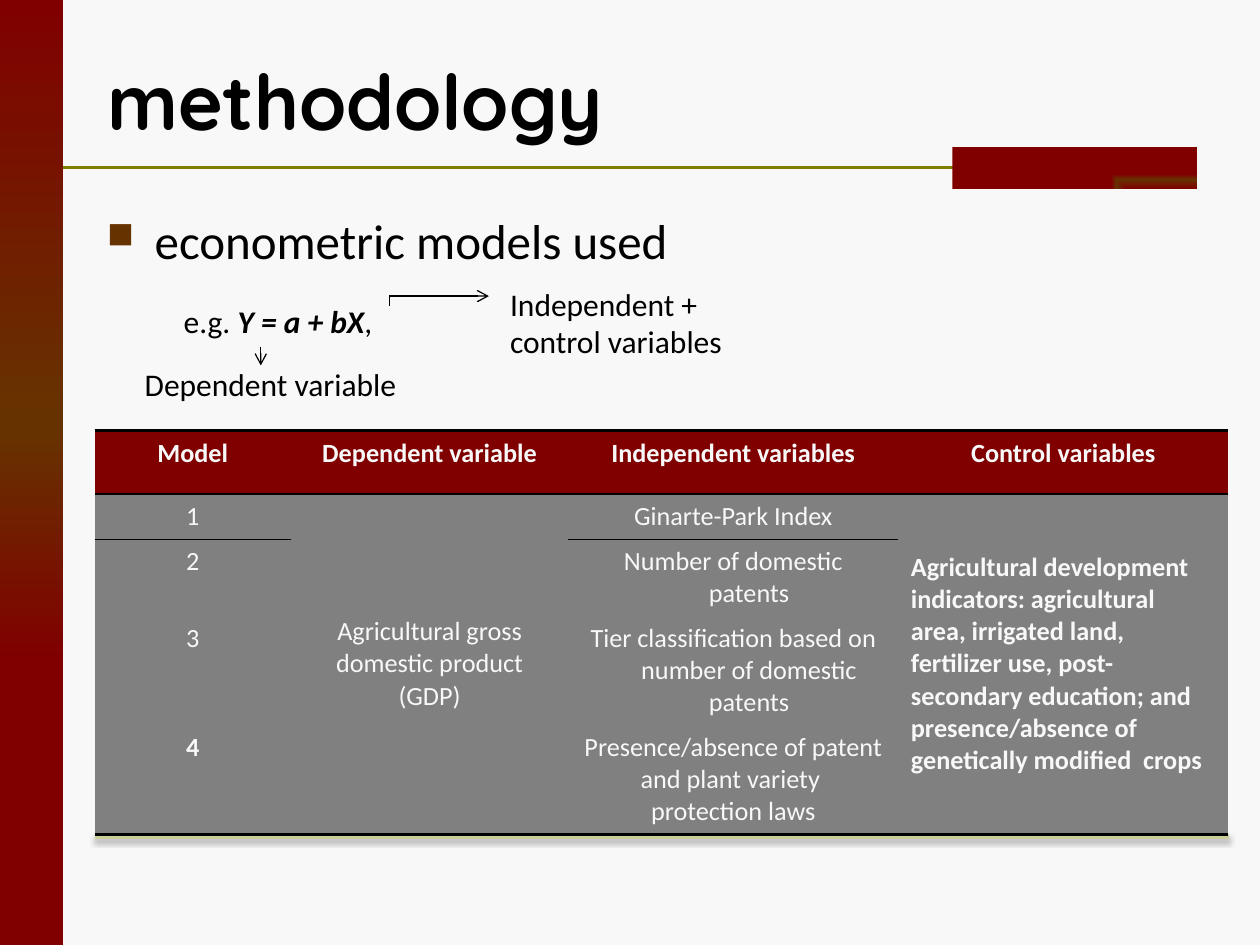
from lxml.etree import SubElement
from pptx import Presentation
from pptx.dml.color import RGBColor as RGB
from pptx.enum.shapes import MSO_CONNECTOR as CONN, MSO_SHAPE as SHAPE
from pptx.enum.text import MSO_ANCHOR as ANCHOR, PP_ALIGN as ALIGN
from pptx.oxml import parse_xml
from pptx.oxml.ns import nsdecls, qn
from pptx.util import Inches, Pt

THEME = dict(
    paper="F8F8F8", ink="000000", red="800000", brown="663300",
    olive="808000", grey="808080", sand="CCCC99",
    head_font="Quicksand", font="Calibri",
    title=44, bullet=28, note=18, cell=15,
)

prs = Presentation()
prs.slide_width, prs.slide_height = Inches(10), Inches(7.5)
U = prs.slide_width // 40  # grid of 40 columns by 30 rows
s = prs.slides.add_slide(prs.slide_layouts[5])
s.background.fill.solid()
s.background.fill.fore_color.rgb = RGB.from_string(THEME["paper"])


def write(tf, *runs, size, color="ink", font="font", bold=False, align=ALIGN.LEFT,
          anchor=ANCHOR.TOP, wrap=True, hang=0, bullet=None):
    """Fill the first paragraph; a run is text or (text, bold italic flag)."""
    tf.word_wrap, tf.vertical_anchor = wrap, anchor
    p = tf.paragraphs[0]
    p.alignment = align
    pPr = p._p.get_or_add_pPr()
    if hang:
        pPr.set("marL", str(Inches(hang)))
        pPr.set("indent", str(-Inches(hang)))
    if bullet:
        clr = SubElement(pPr, qn("a:buClr"))
        SubElement(clr, qn("a:srgbClr"), val=THEME["brown"])
        SubElement(pPr, qn("a:buSzPct"), val="75000")
        SubElement(pPr, qn("a:buChar"), char=bullet)
    for run in runs:
        text, strong = run if isinstance(run, tuple) else (run, False)
        for i, line in enumerate(text.split("\n")):
            if i:
                p.add_line_break()
            r = p.add_run()
            r.text = line
            r.font.name, r.font.size = THEME[font], Pt(THEME[size])
            r.font.bold, r.font.italic = bold or strong, strong
            r.font.color.rgb = RGB.from_string(THEME[color])


def add_line(x1, y1, x2, y2, color="ink", width=0.75, arrow=False, shadow=False):
    c = s.shapes.add_connector(CONN.STRAIGHT, *(int(v * U) for v in (x1, y1, x2, y2)))
    c.line.color.rgb = RGB.from_string(THEME[color])
    c.line.width = Pt(width)
    if arrow:
        SubElement(c.line._get_or_add_ln(), qn("a:tailEnd"), type="arrow")
    effects = SubElement(c._element.spPr, qn("a:effectLst"))
    if shadow:
        effects.append(parse_xml(
            f'<a:outerShdw {nsdecls("a")} blurRad="{Pt(3.1)}" dist="{Pt(1.8)}" dir="5400000">'
            f'<a:srgbClr val="{THEME["ink"]}"><a:alpha val="35000"/></a:srgbClr>'
            '</a:outerShdw>'))


# Frame: rule, side band and tab
add_line(2, 5.32, 38, 5.32, "olive", 1.5)
stops = "".join(
    f'<a:gs pos="{pos * 1000}"><a:srgbClr val="{THEME[color]}"/></a:gs>'
    for pos, color in ((0, "red"), (45, "brown"), (70, "red"), (100, "red")))
down = '<a:lin ang="5400000" scaled="0"/>'
corner = '<a:path path="rect"><a:fillToRect l="100000" t="100000"/></a:path>'
for box, direction in (((0, 0, 2, 30), down), ((30.24, 4.68, 7.76, 1.32), corner)):
    sp = s.shapes.add_shape(SHAPE.RECTANGLE, *(int(v * U) for v in box))
    sp.shadow.inherit = False
    sp.line.fill.background()
    sp._element.spPr.find(qn("a:prstGeom")).addnext(parse_xml(
        f'<a:gradFill {nsdecls("a")}><a:gsLst>{stops}</a:gsLst>{direction}</a:gradFill>'))

title = s.shapes.title
title.left, title.top, title.width, title.height = (int(v * U) for v in (3, 0.68, 34, 5))
write(title.text_frame, "methodology", size="title", font="head_font", bold=True,
      anchor=ANCHOR.MIDDLE)

# Bullet and equation with its labels
texts = [
    ((3, 6.48, 36, 2.2), ["econometric models used"],
     dict(size="bullet", hang=0.38, bullet="■")),
    ((5.44, 9.4, 7.24, 1.6), ["e.g. ", ("Y = a + bX", True), ","],
     dict(size="note", wrap=False)),
    ((4.2, 11.4, 10.08, 1.6), ["Dependent variable"], dict(size="note")),
    ((15.8, 8.84, 8.2, 2.84), ["Independent + \ncontrol variables"], dict(size="note")),
]
for box, runs, fmt in texts:
    tb = s.shapes.add_textbox(*(int(v * U) for v in box))
    write(tb.text_frame, *runs, **fmt)
add_line(8.28, 11, 8.28, 11.6, arrow=True)
add_line(12.36, 9.4, 15.52, 9.4, arrow=True)
add_line(12.36, 9.4, 12.36, 9.72)

# Model table
rows = [
    ["Model", "Dependent variable", "Independent variables", "Control variables"],
    ["1", "Agricultural gross domestic product (GDP)", "Ginarte-Park Index",
     "Agricultural development indicators: agricultural area, irrigated land, "
     "fertilizer use, post-secondary education; and presence/absence of "
     "genetically modified  crops"],
    ["2", "", "Number of domestic patents", ""],
    ["3", "", "Tier classification based on number of domestic patents", ""],
    ["4", "", "Presence/absence of patent and plant variety \nprotection laws", ""],
]
widths = [6.24, 8.8, 10.48, 10.48]
heights = [2, 1.44, 2.44, 3.46, 3.46]
merged = (1, 3)
last = len(rows) - 1
add_line(3, 26.56, 39, 26.56, "sand", 3, shadow=True)
table = s.shapes.add_table(len(rows), len(widths), 3 * U, int(13.68 * U),
                           int(sum(widths) * U), int(sum(heights) * U)).table
for column, width in zip(table.columns, widths):
    column.width = int(width * U)
for row, height in zip(table.rows, heights):
    row.height = int(height * U)
for c in merged:
    table.cell(1, c).merge(table.cell(last, c))

for r, row in enumerate(rows):
    for c, text in enumerate(row):
        cell = table.cell(r, c)
        rule_above = {0: 2, 1: 1, 2: 0 if c in merged else 1}.get(r, 0)
        rule_below = {0: 1, 1: 0 if c in merged else 1, last: 2}.get(r, 0)
        if r == 1 and c in merged:
            rule_below = 2
        tcPr = cell._tc.get_or_add_tcPr()
        for side, width in (("L", 0), ("R", 0), ("T", rule_above), ("B", rule_below)):
            ln = SubElement(tcPr, qn(f"a:ln{side}"), w=str(Pt(width)))
            if width:
                fill = SubElement(ln, qn("a:solidFill"))
                SubElement(fill, qn("a:srgbClr"), val=THEME["ink"])
            else:
                SubElement(ln, qn("a:noFill"))
        cell.fill.solid()
        cell.fill.fore_color.rgb = RGB.from_string(THEME["grey" if r else "red"])
        if not text:
            continue
        write(cell.text_frame, text, size="cell", color="paper",
              bold=r == 0 or c == 3 or text == "4",
              align=ALIGN.LEFT if r and c == 3 else ALIGN.CENTER,
              hang=0.25 if c == 2 and 0 < r < last else 0)
        cell.vertical_anchor = ANCHOR.MIDDLE if r and c in merged else ANCHOR.TOP

prs.save("out.pptx")
